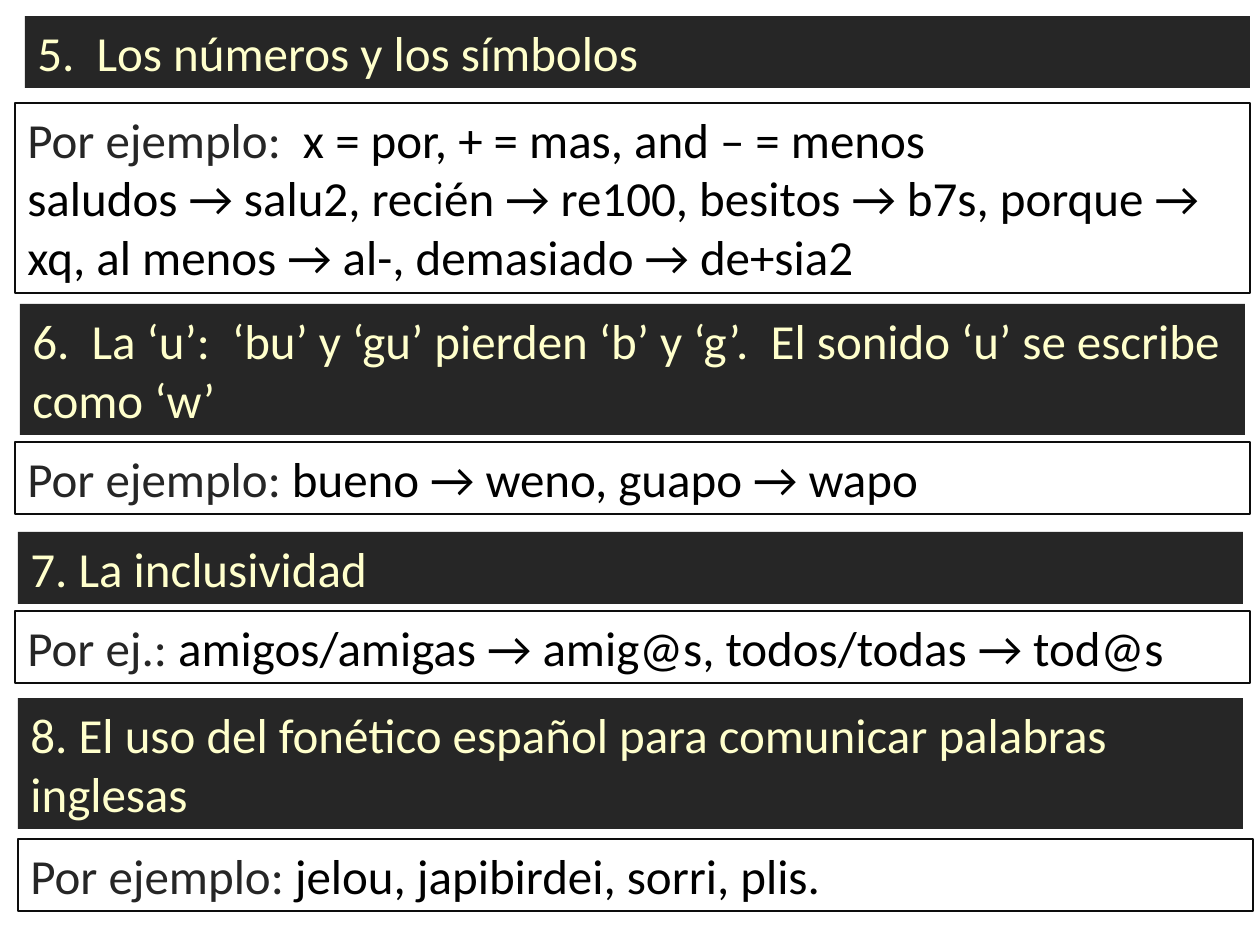
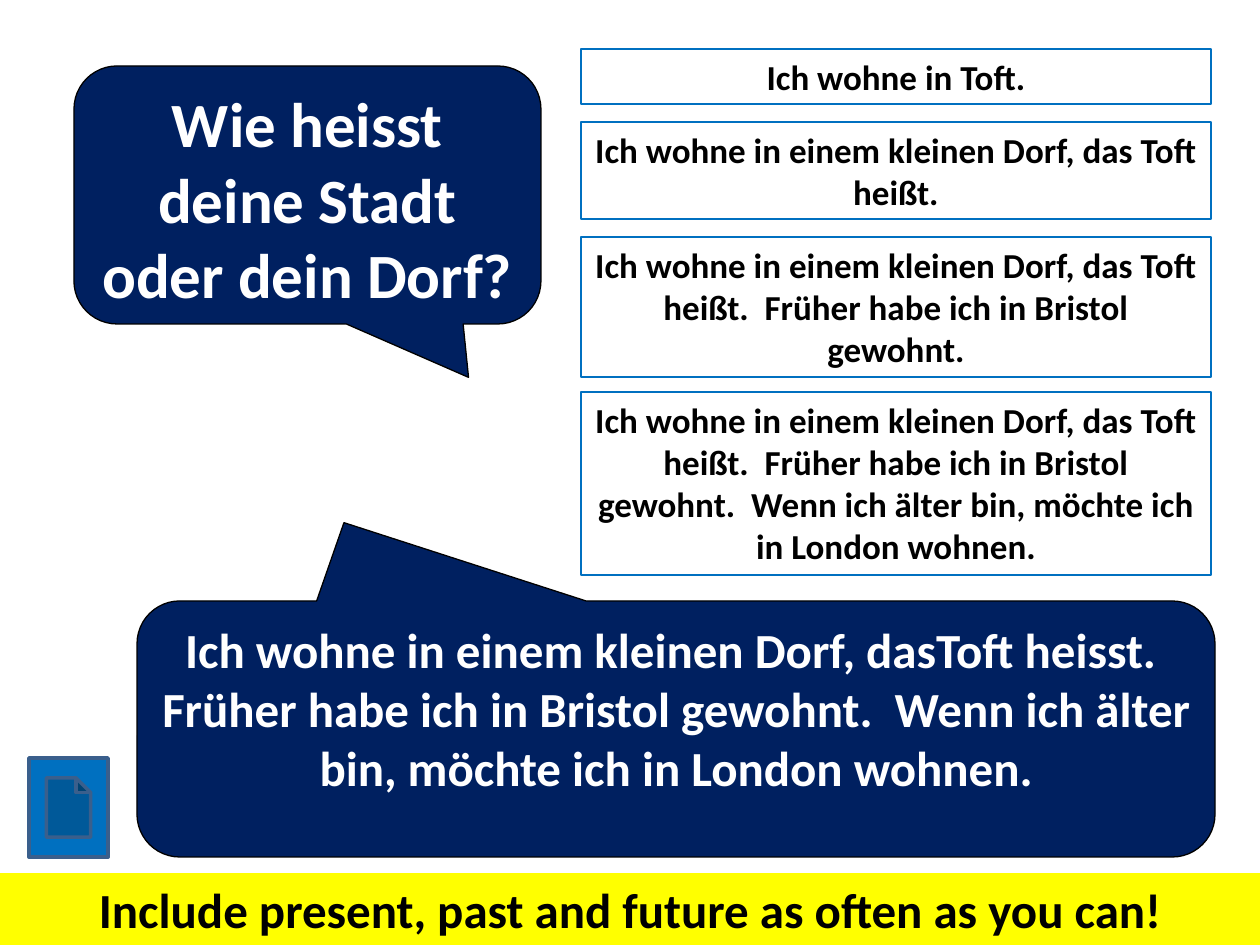
from itertools import accumulate

from pptx import Presentation
from pptx.dml.color import RGBColor
from pptx.enum.shapes import MSO_SHAPE as SHAPE
from pptx.enum.text import MSO_ANCHOR as ANCHOR, MSO_AUTO_SIZE as FIT, PP_ALIGN as ALIGN
from pptx.util import Emu, Pt

PX_PER_INCH = 126
SLIDE_W, SLIDE_H = 1260, 945
BLANK = 6
FONT = "Calibri"
WHITE, BLACK, YELLOW = "FFFFFF", "000000", "FFFF00"
DARK, CREAM, EDGE = "262626", "FFFFCC", "0D0D0D"
NAVY, BLUE, BUTTON_EDGE = "002060", "0070C0", "3A5F8C"
LINE_H, INSETS_H = 59, 13

RULES = [
    ((25, 16, 1), "5.  Los números y los símbolos",
     (15, 103, 3), "Por ejemplo: ",
     [" x = por, + = mas, and – = menos",
      "saludos → salu2, recién → re100, besitos → b7s, porque → xq, "
      "al menos → al-, demasiado → de+sia2"]),
    ((20, 304, 2), "6.  La ‘u’:  ‘bu’ y ‘gu’ pierden ‘b’ y ‘g’.  "
     "El sonido ‘u’ se escribe como ‘w’",
     (15, 442, 1), "Por ejemplo: ", ["bueno → weno, guapo → wapo"]),
    ((18, 532, 1), "7. La inclusividad",
     (15, 611, 1), "Por ej.: ", ["amigos/amigas → amig@s, todos/todas → tod@s"]),
    ((18, 698, 2), "8. El uso del fonético español para comunicar palabras inglesas",
     (18, 839, 1), "Por ejemplo: ", ["jelou, japibirdei, sorri, plis."]),
]

QUESTION = "Wie heisst deine Stadt oder dein Dorf?"
PAST = "  Früher habe ich in Bristol gewohnt."
FUTURE = "  Wenn ich älter bin, möchte ich in London wohnen."
ANSWERS = ["Ich wohne in Toft.",
           *accumulate(["Ich wohne in einem kleinen Dorf, das Toft heißt.", PAST, FUTURE])]
ANSWER_ROWS = [(49, 55), (122, 97), (237, 140), (392, 183)]
MODEL_ANSWER = "Ich wohne in einem kleinen Dorf, dasToft heisst." + PAST + FUTURE
REMINDER = "Include present, past and future as often as you can!"


def px(n):
    return Emu(round(n * 914400 / PX_PER_INCH))


def rgb(color):
    return RGBColor.from_string(color)


def add_box(s, box, kind=SHAPE.RECTANGLE, fill=None, line=None, width=0.75, adj=()):
    sp = s.shapes.add_shape(kind, *map(px, box))
    sp.shadow.inherit = False
    if fill:
        sp.fill.solid()
        sp.fill.fore_color.rgb = rgb(fill)
    else:
        sp.fill.background()
    if line:
        sp.line.color.rgb = rgb(line)
        sp.line.width = Pt(width)
    else:
        sp.line.fill.background()
    for i, value in enumerate(adj):
        sp.adjustments[i] = value
    return sp


def add_text(sp, paragraphs, size=28, bold=False, align=ALIGN.LEFT, grow=True):
    tf = sp.text_frame
    tf.word_wrap = True
    tf.vertical_anchor = ANCHOR.TOP
    tf.auto_size = FIT.SHAPE_TO_FIT_TEXT if grow else FIT.NONE
    for i, runs in enumerate(paragraphs):
        p = tf.add_paragraph() if i else tf.paragraphs[0]
        p.alignment = align
        for text, color in runs:
            r = p.add_run()
            r.text = text
            r.font.name = FONT
            r.font.size = Pt(size)
            r.font.bold = bold
            r.font.color.rgb = rgb(color)


def lines_box(place, width):
    left, top, lines = place
    return left, top, width, INSETS_H + LINE_H * lines


def add_rule(s, heading_at, heading, example_at, label, examples):
    sp = add_box(s, lines_box(heading_at, 1225), fill=DARK)
    add_text(sp, [[(heading, CREAM)]])
    paragraphs = [[(text, BLACK)] for text in examples]
    paragraphs[0].insert(0, (label, DARK))
    add_text(add_box(s, lines_box(example_at, 1235), line=EDGE), paragraphs)


def add_callout(s, box, text, size, tail):
    sp = add_box(s, box, SHAPE.ROUNDED_RECTANGULAR_CALLOUT, NAVY, BLACK, adj=(*tail, 0.167))
    add_text(sp, [[(text, WHITE)]], size=size, bold=True, align=ALIGN.CENTER, grow=False)


def add_answers(s, left, width):
    for (top, height), text in zip(ANSWER_ROWS, ANSWERS):
        sp = add_box(s, (left, top, width, height), line=BLUE)
        add_text(sp, [[(text, BLACK)]], size=20, bold=True, align=ALIGN.CENTER)


def add_reminder(s, height):
    sp = add_box(s, (0, SLIDE_H - height, SLIDE_W, height), fill=YELLOW)
    add_text(sp, [[(REMINDER, BLACK)]], bold=True, align=ALIGN.CENTER)


def build_rules(prs):
    s = prs.slides.add_slide(prs.slide_layouts[BLANK])
    for rule in RULES:
        add_rule(s, *rule)


def build_dialogue(prs):
    s = prs.slides.add_slide(prs.slide_layouts[BLANK])
    add_callout(s, (74, 66, 467, 258), QUESTION, 36, (0.345, 0.707))
    add_callout(s, (137, 601, 1078, 256), MODEL_ANSWER, 28, (-0.308, -0.806))
    add_reminder(s, INSETS_H + LINE_H)
    add_answers(s, 581, 630)
    add_box(s, (29, 758, 79, 99), SHAPE.ACTION_BUTTON_DOCUMENT, BLUE, BUTTON_EDGE, width=2)


def main():
    prs = Presentation()
    prs.slide_width, prs.slide_height = px(SLIDE_W), px(SLIDE_H)
    build_rules(prs)
    build_dialogue(prs)
    prs.save("out.pptx")


if __name__ == "__main__":
    main()
